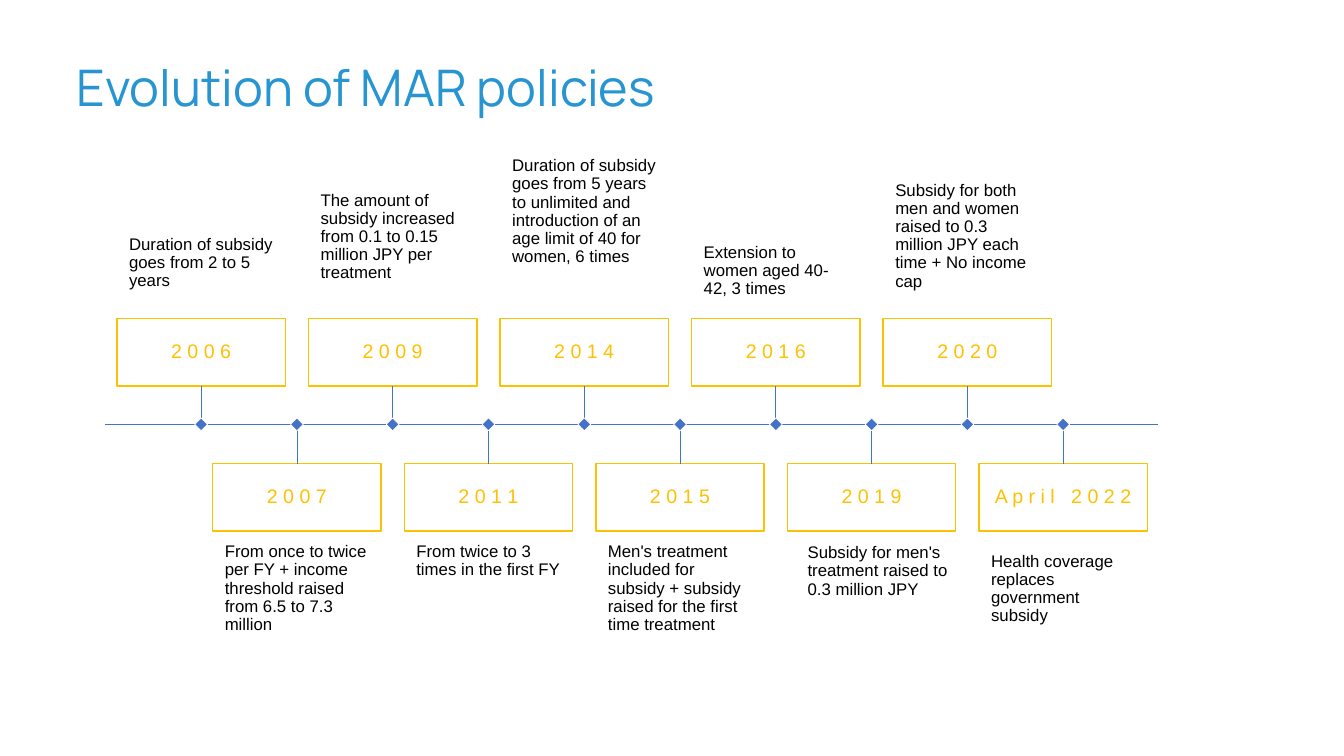
"""Build the timeline slide on the evolution of MAR policies."""
from lxml import etree
from pptx import Presentation
from pptx import util as u
from pptx.dml.color import RGBColor
from pptx.enum import shapes, text
from pptx.oxml import ns

TITLE = "Evolution of MAR policies"
TOP, MIDDLE = text.MSO_ANCHOR.TOP, text.MSO_ANCHOR.MIDDLE
EVENTS = [
    ("2006", "Duration of subsidy goes from 2 to 5 years", 0.94, TOP),
    ("2007", "From once to twice per FY + income threshold raised from 6.5 to 7.3 million", 1.38, TOP),
    ("2009", "The amount of subsidy increased from 0.1 to 0.15 million JPY per treatment", 1.38, TOP),
    ("2011", "From twice to 3 times in the first FY", 0.94, TOP),
    ("2014", "Duration of subsidy goes from 5 years to unlimited and introduction of "
             "an age limit of 40 for women, 6 times", 1.72, TOP),
    ("2015", "Men's treatment included for subsidy + subsidy raised for the first "
             "time treatment", 1.38, TOP),
    ("2016", "Extension to women aged 40-42, 3 times", 0.94, MIDDLE),
    ("2019", "Subsidy for men's treatment raised to 0.3 million JPY", 0.94, TOP),
    ("2020", "Subsidy for both men and women raised to 0.3 million JPY each time "
             "+ No income cap", 1.63, MIDDLE),
    ("April 2022", "Health coverage replaces government subsidy", 1.15, MIDDLE),
]
NOTE_SHIFTS = {"2019": (0.08, 0.01)}
COLORS = {"title": "2695D2", "axis": "4472C4", "box": "FFC000",
          "outline": "FF9300", "note": "000000", "edge": "FFFFFF"}
FORMATS = {
    "title": {"size": u.Pt(36), "name": "Manrope"},
    "box": {"size": u.Pt(14), "name": "Arial"},
    "note": {"size": u.Pt(12), "name": "Arial"},
}
FIRST, STEP = 1.16, 0.95
BOX_WIDTH, BOX_HEIGHT = 1.67, 0.67
UPPER, LOWER = 3.16, 4.6
AXIS, AXIS_START, AXIS_END = 4.21, 1.04, 11.49
MARKER = 0.09


def color(name):
    return RGBColor.from_string(COLORS[name])


def write(shape, words, style, align, anchor, inset):
    frame = shape.text_frame
    side, edge = map(u.Inches, inset)
    settings = {"word_wrap": True, "auto_size": text.MSO_AUTO_SIZE.NONE,
                "vertical_anchor": anchor, "margin_left": side,
                "margin_right": side, "margin_top": edge, "margin_bottom": edge}
    for name, value in settings.items():
        setattr(frame, name, value)
    para = frame.paragraphs[0]
    para.alignment, para.line_spacing = align, 0.9
    span = para.add_run()
    span.text = words
    for name, value in FORMATS[style].items():
        setattr(span.font, name, value)
    span.font.color.rgb = color(style)
    return span


def outline_text(span):
    line = etree.Element(ns.qn("a:ln"), w=str(u.Pt(0.75)))
    fill = etree.SubElement(line, ns.qn("a:solidFill"))
    etree.SubElement(fill, ns.qn("a:srgbClr"), val=COLORS["outline"])
    span.font._element.insert(0, line)


def add_rectangle(slide, left, top, width, height, line, weight):
    shape = slide.shapes.add_shape(shapes.MSO_SHAPE.RECTANGLE,
                                   *map(u.Inches, (left, top, width, height)))
    shape.shadow.inherit = False
    shape.fill.background()
    shape.line.color.rgb = color(line)
    shape.line.width = u.Pt(weight)
    return shape


def add_line(slide, start, end, weight):
    line = slide.shapes.add_connector(shapes.MSO_CONNECTOR.STRAIGHT,
                                      *map(u.Inches, start + end))
    line.line.color.rgb = color("axis")
    line.line.width = u.Pt(weight)
    etree.SubElement(line._element.spPr, ns.qn("a:effectLst"))
    return line


def add_event(slide, index, year, note, note_height, anchor):
    above = index % 2 == 0
    left = FIRST + STEP * index
    center = left + BOX_WIDTH / 2
    top = UPPER if above else LOWER

    box = add_rectangle(slide, left, top, BOX_WIDTH, BOX_HEIGHT, "box", 1)
    outline_text(write(box, " ".join(year), "box", text.PP_ALIGN.CENTER,
                       MIDDLE, (0.08, 0)))

    shift_x, shift_y = NOTE_SHIFTS.get(year, (0, 0))
    note_top = top - note_height if above else top + BOX_HEIGHT
    area = (left + shift_x, note_top + shift_y, BOX_WIDTH, note_height)
    note_box = slide.shapes.add_textbox(*map(u.Inches, area))
    write(note_box, note, "note", text.PP_ALIGN.LEFT, anchor, (0.12, 0.12))

    edge = top + BOX_HEIGHT if above else top
    stem = add_line(slide, (center, edge), (center, AXIS), 0.5)
    stem.begin_connect(box, 2 if above else 0)

    marker = add_rectangle(slide, center - MARKER / 2, AXIS - MARKER / 2,
                           MARKER, MARKER, "edge", 0.5)
    marker.rotation = 45
    marker.fill.solid()
    marker.fill.fore_color.rgb = color("axis")


def main():
    deck = Presentation()
    deck.slide_width, deck.slide_height = u.Inches(13.33), u.Inches(7.5)
    slide = deck.slides.add_slide(deck.slide_layouts.get_by_name("Title Only"))
    title = slide.shapes.title
    place = {"left": 0.66, "top": 0.17, "width": 10.24, "height": 1.45}
    for name, value in place.items():
        setattr(title, name, u.Inches(value))
    write(title, TITLE, "title", text.PP_ALIGN.LEFT, MIDDLE, (0.1, 0.05))
    add_line(slide, (AXIS_START, AXIS), (AXIS_END, AXIS), 1)
    for index, event in enumerate(EVENTS):
        add_event(slide, index, *event)
    deck.save("out.pptx")


if __name__ == "__main__":
    main()
